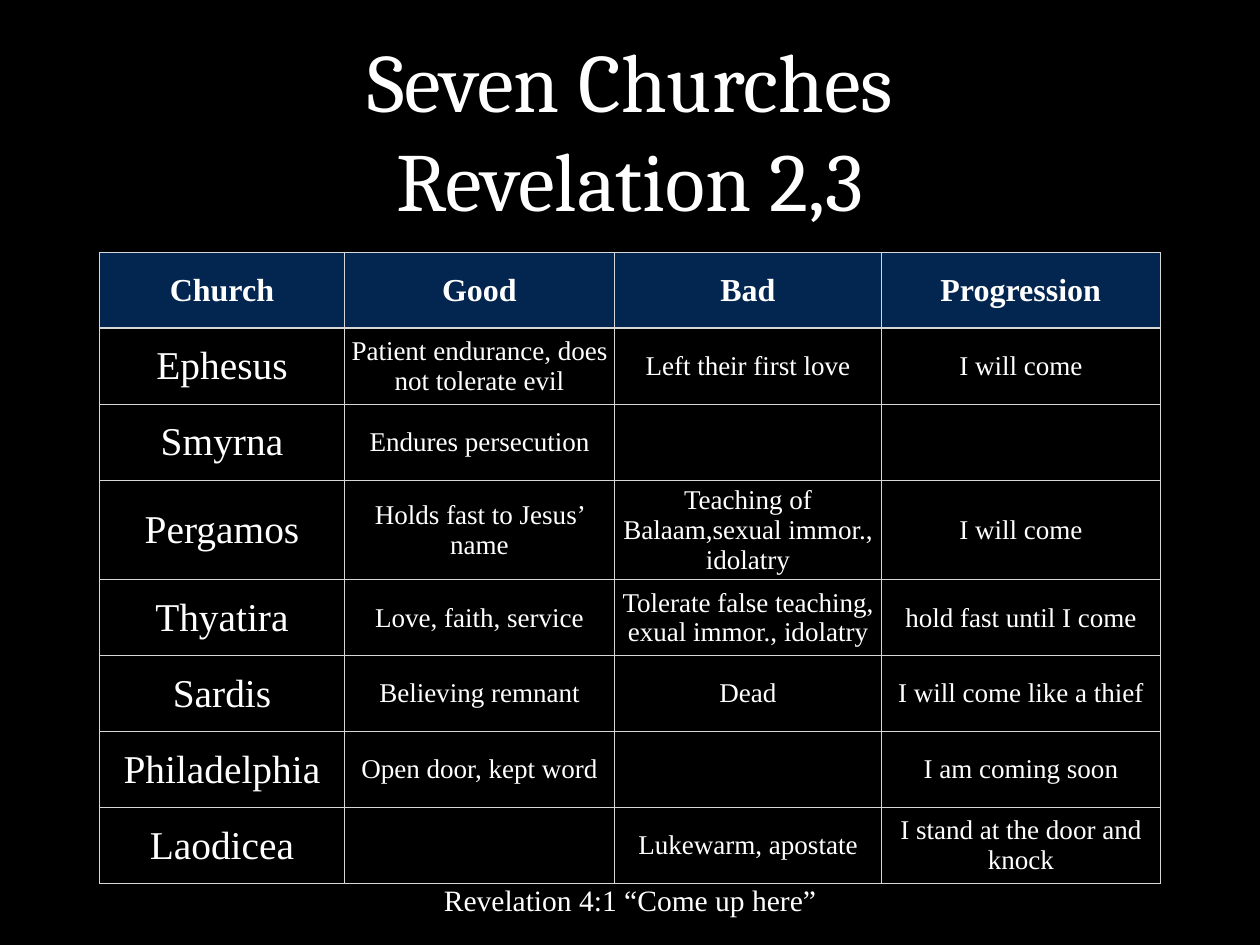
from lxml import etree
from pptx import Presentation
from pptx.dml.color import RGBColor
from pptx.enum import text
from pptx.oxml import ns
from pptx.util import Pt

BLACK = RGBColor(0x00, 0x00, 0x00)
WHITE = RGBColor(0xFF, 0xFF, 0xFF)
NAVY = RGBColor(0x03, 0x26, 0x50)
BORDER = RGBColor(0xD6, 0xD7, 0xD6)
INSET = Pt(4)
ROW_HEIGHT = Pt(61.75)
COLUMN_WIDTHS = [198.9, 219.5, 217, 226.5]

HEADINGS = ["Church", "Good", "Bad", "Progression"]
CHURCHES = [
    ["Ephesus", "Patient endurance, does not tolerate evil", "Left their first love", "I will come"],
    ["Smyrna", "Endures persecution", "", ""],
    ["Pergamos", "Holds fast to Jesus’ name", "Teaching of Balaam,sexual immor., idolatry", "I will come"],
    ["Thyatira", "Love, faith, service", "Tolerate false teaching,\nexual immor., idolatry", "hold fast until I come"],
    ["Sardis", "Believing remnant", "Dead", "I will come like a thief"],
    ["Philadelphia", "Open door, kept word", "", "I am coming soon"],
    ["Laodicea", "", "Lukewarm, apostate", "I stand at the door and knock"],
]


def write_line(paragraph, content, size, font="Times New Roman", bold=False):
    paragraph.alignment = text.PP_ALIGN.CENTER
    for index, part in enumerate(content.split("\n")):
        if index:
            paragraph.add_line_break()
        run = paragraph.add_run()
        run.text = part
        run.font.size = Pt(size)
        run.font.name = font
        run.font.bold = bold
        run.font.color.rgb = WHITE


def set_insets(holder):
    holder.margin_left = holder.margin_right = INSET
    holder.margin_top = holder.margin_bottom = INSET
    holder.vertical_anchor = text.MSO_ANCHOR.MIDDLE


presentation = Presentation()
presentation.slide_width = Pt(1024)
presentation.slide_height = Pt(768)
slide = presentation.slides.add_slide(presentation.slide_layouts[5])
slide.background.fill.solid()
slide.background.fill.fore_color.rgb = BLACK

title = slide.shapes.title
title.left, title.top, title.width, title.height = Pt(75), Pt(20), Pt(874), Pt(170)
title_frame = title.text_frame
title_frame.auto_size = text.MSO_AUTO_SIZE.NONE
title_frame.word_wrap = True
set_insets(title_frame)
write_line(title_frame.paragraphs[0], "Seven Churches", 67.2, "Cambria")
write_line(title_frame.add_paragraph(), "Revelation 2,3", 67.2, "Cambria")

rows = [HEADINGS] + CHURCHES
table_shape = slide.shapes.add_table(
    len(rows), len(HEADINGS), Pt(81), Pt(205), Pt(sum(COLUMN_WIDTHS)), ROW_HEIGHT * len(rows)
)
table = table_shape.table
table.horz_banding = False
for column, width in zip(table.columns, COLUMN_WIDTHS):
    column.width = Pt(width)

for row_index, row in enumerate(rows):
    table.rows[row_index].height = ROW_HEIGHT
    is_header = row_index == 0
    for column_index, content in enumerate(row):
        cell = table.cell(row_index, column_index)
        set_insets(cell)
        if content:
            size = 26 if is_header else 32 if column_index == 0 else 22
            write_line(cell.text_frame.paragraphs[0], content, size, bold=is_header)
        properties = cell._tc.get_or_add_tcPr()
        for side in ("L", "R", "T", "B"):
            thick = (row_index, side) in ((0, "B"), (1, "T"))
            line = etree.SubElement(properties, ns.qn(f"a:ln{side}"), w=str(Pt(2 if thick else 1)))
            line_fill = etree.SubElement(line, ns.qn("a:solidFill"))
            etree.SubElement(line_fill, ns.qn("a:srgbClr"), val=str(BORDER))
        cell.fill.solid()
        cell.fill.fore_color.rgb = NAVY if is_header else BLACK

caption = slide.shapes.add_textbox(Pt(356), Pt(714), Pt(312), Pt(34))
caption_frame = caption.text_frame
caption_frame.word_wrap = False
caption_frame.auto_size = text.MSO_AUTO_SIZE.SHAPE_TO_FIT_TEXT
set_insets(caption_frame)
write_line(caption_frame.paragraphs[0], "Revelation 4:1 “Come up here”", 24)

presentation.save("out.pptx")
